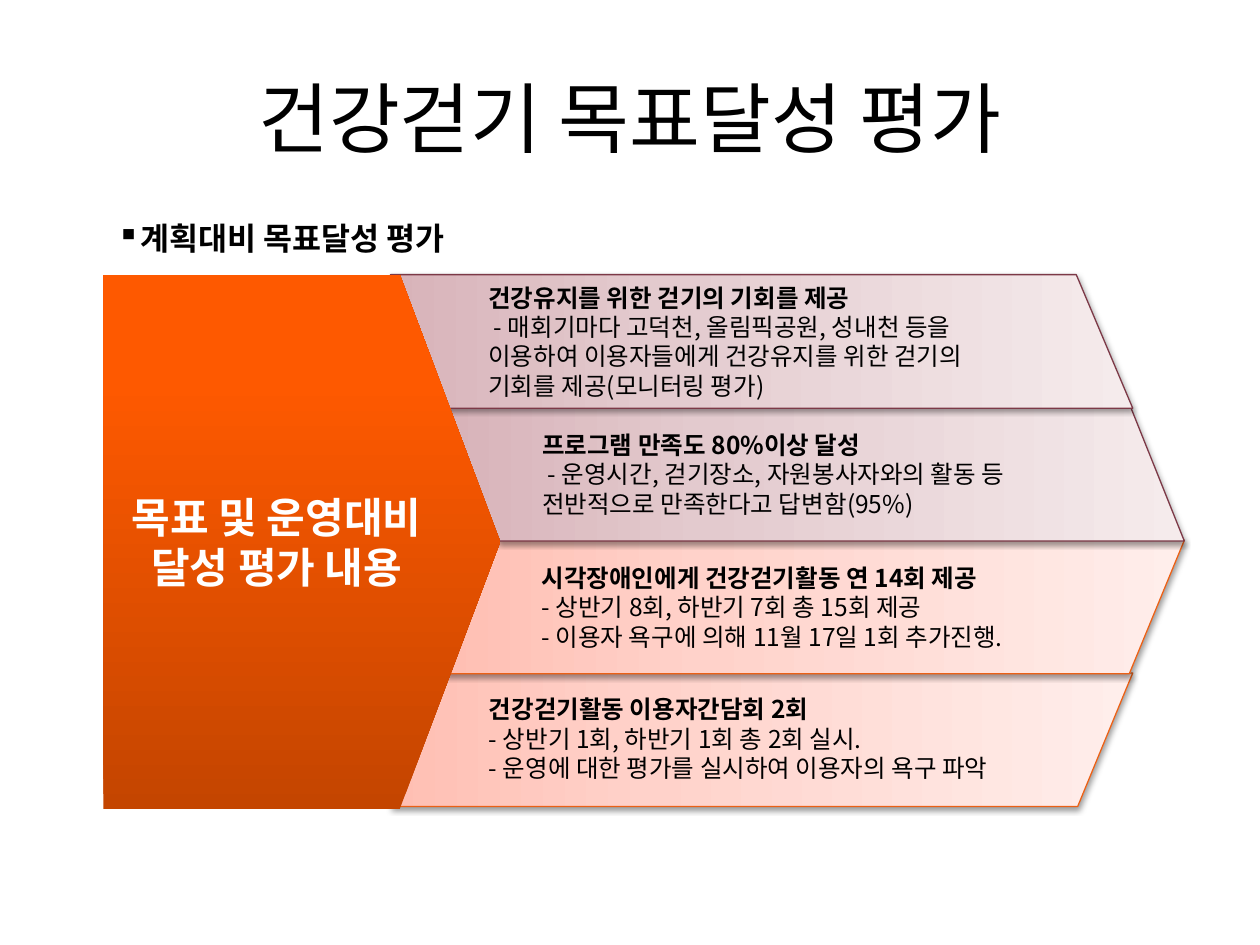
from lxml.etree import SubElement
from pptx import Presentation
from pptx.dml.color import RGBColor
from pptx.enum.shapes import MSO_SHAPE as Shape
from pptx.enum.text import MSO_ANCHOR as Anchor, MSO_AUTO_SIZE as AutoSize, PP_ALIGN as Align
from pptx.oxml.ns import qn
from pptx.util import Inches, Pt

ROSE = dict(stops=[(0, "D8B3B9"), (35, "E3CACE"), (100, "F5EBEC")], angle=180, edge="7C3947")
PEACH = dict(stops=[(0, "FFBFB3"), (35, "FFD2CA"), (100, "FFEEEB")], angle=0, edge="EB6015")
ORANGE = dict(stops=[(0, "C44500"), (80, "FE5900"), (100, "FF5A00")], angle=270, edge=None)


def color(hex_code):
    return RGBColor.from_string(hex_code)


def add_xml(parent, tag, **attributes):
    return SubElement(parent, qn(tag), {key: str(value) for key, value in attributes.items()})


class SlideBuilder:
    """Places elements on a grid of 100 columns by 75 rows."""
    font = "Noto Sans CJK KR"

    def __init__(self, deck):
        self.slide = deck.slides.add_slide(deck.slide_layouts[5])
        self.column = deck.slide_width / 100
        self.row = deck.slide_height / 75

    def box(self, left, top, width, height):
        return [round(left * self.column), round(top * self.row),
                round(width * self.column), round(height * self.row)]

    def add_lines(self, shape, lines, size, ink="000000", align=Align.LEFT, anchor=Anchor.MIDDLE):
        """Each line is a (text, bold) pair."""
        frame = shape.text_frame
        frame.word_wrap = True
        frame.vertical_anchor = anchor
        for number, (text, bold) in enumerate(lines):
            paragraph = frame.add_paragraph() if number else frame.paragraphs[0]
            paragraph.alignment = align
            run = paragraph.add_run()
            run.text = text
            run.font.size, run.font.bold, run.font.name = Pt(size), bold, self.font
            run.font.color.rgb = color(ink)
            add_xml(run.font._element, "a:ea", typeface=self.font)

    def title(self, text, *place):
        heading = self.slide.shapes.title
        heading.left, heading.top, heading.width, heading.height = self.box(*place)
        self.add_lines(heading, [(text, False)], 44, align=Align.CENTER)

    def bullet(self, text, *place):
        caption = self.slide.shapes.add_textbox(*self.box(*place))
        self.add_lines(caption, [(text, True)], 18, anchor=Anchor.TOP)
        caption.text_frame.auto_size = AutoSize.SHAPE_TO_FIT_TEXT
        properties = caption.text_frame.paragraphs[0]._p.get_or_add_pPr()
        add_xml(properties, "a:buChar", char="▪")

    def panel(self, kind, place, adjustment, palette, flipped=False):
        panel = self.slide.shapes.add_shape(kind, *self.box(*place))
        panel.adjustments[0] = adjustment
        panel.shadow.inherit = False
        properties = panel._element.spPr
        if flipped:
            properties.xfrm.set("flipH", "1")

        # Gradient
        panel.fill.gradient()
        gradient = properties.find(qn("a:gradFill"))
        stops = gradient.find(qn("a:gsLst"))
        for stop in list(stops):
            stops.remove(stop)
        for position, shade in palette["stops"]:
            stop = add_xml(stops, "a:gs", pos=position * 1000)
            add_xml(stop, "a:srgbClr", val=shade)
        gradient.find(qn("a:lin")).set("ang", str(palette["angle"] * 60000))

        # Outline and shadow
        if palette["edge"]:
            panel.line.color.rgb = color(palette["edge"])
            panel.line.width = Pt(0.75)
            shadow = add_xml(properties.find(qn("a:effectLst")), "a:outerShdw", blurRad=Pt(3.1),
                             dist=Pt(1.6), dir=90 * 60000, rotWithShape=0)
            add_xml(add_xml(shadow, "a:srgbClr", val="000000"), "a:alpha", val=38000)
        else:
            panel.line.fill.background()
        return panel


def main():
    deck = Presentation()
    deck.slide_width, deck.slide_height = Inches(10), Inches(7.5)
    page = SlideBuilder(deck)
    page.title("건강걷기 목표달성 평가", 5, 3, 90, 12.5)

    # Goals from top to bottom: left, width, slant, palette, anchor, lines
    goals = [
        (31, 58.9, 0.423, ROSE, Anchor.MIDDLE, [
            "건강유지를 위한 걷기의 기회를 제공",
            " - 매회기마다 고덕천, 올림픽공원, 성내천 등을 이용하여 이용자들에게 "
            "건강유지를 위한 걷기의 기회를 제공(모니터링 평가)"]),
        (35.4, 58.6, 0.401, ROSE, Anchor.MIDDLE, [
            "프로그램 만족도 80%이상 달성",
            " - 운영시간, 걷기장소, 자원봉사자와의 활동 등 전반적으로 만족한다고 답변함(95%)"]),
        (35.3, 58.7, 0.412, PEACH, Anchor.MIDDLE, [
            "시각장애인에게 건강걷기활동 연 14회 제공",
            "- 상반기 8회, 하반기 7회 총 15회 제공",
            "- 이용자 욕구에 의해 11월 17일 1회 추가진행."]),
        (31.1, 58.8, 0.412, PEACH, Anchor.TOP, [
            "건강걷기활동 이용자간담회 2회",
            "- 상반기 1회, 하반기 1회 총 2회 실시.",
            "- 운영에 대한 평가를 실시하여 이용자의 욕구 파악"]),
    ]
    top, pitch, height = 21.8, 10.54, 10.6
    for level, goal in reversed(list(enumerate(goals))):
        left, width, slant, palette, anchor, lines = goal
        band = page.panel(Shape.PARALLELOGRAM, (left, top + level * pitch, width, height),
                          slant, palette, flipped=palette is ROSE)
        page.add_lines(band, [(line, number == 0) for number, line in enumerate(lines)],
                       14, anchor=anchor)

    # Arrow block that covers the left ends of the bands
    summary = page.panel(Shape.PENTAGON, (8.2, top, 31.5, 42.4), 0.253, ORANGE)
    page.add_lines(summary, [("목표 및 운영대비 달성 평가 내용", True)], 24, "FFFFFF", Align.CENTER)

    page.bullet("계획대비 목표달성 평가", 8.3, 16.9, 78.3, 4)
    deck.save("out.pptx")


if __name__ == "__main__":
    main()
